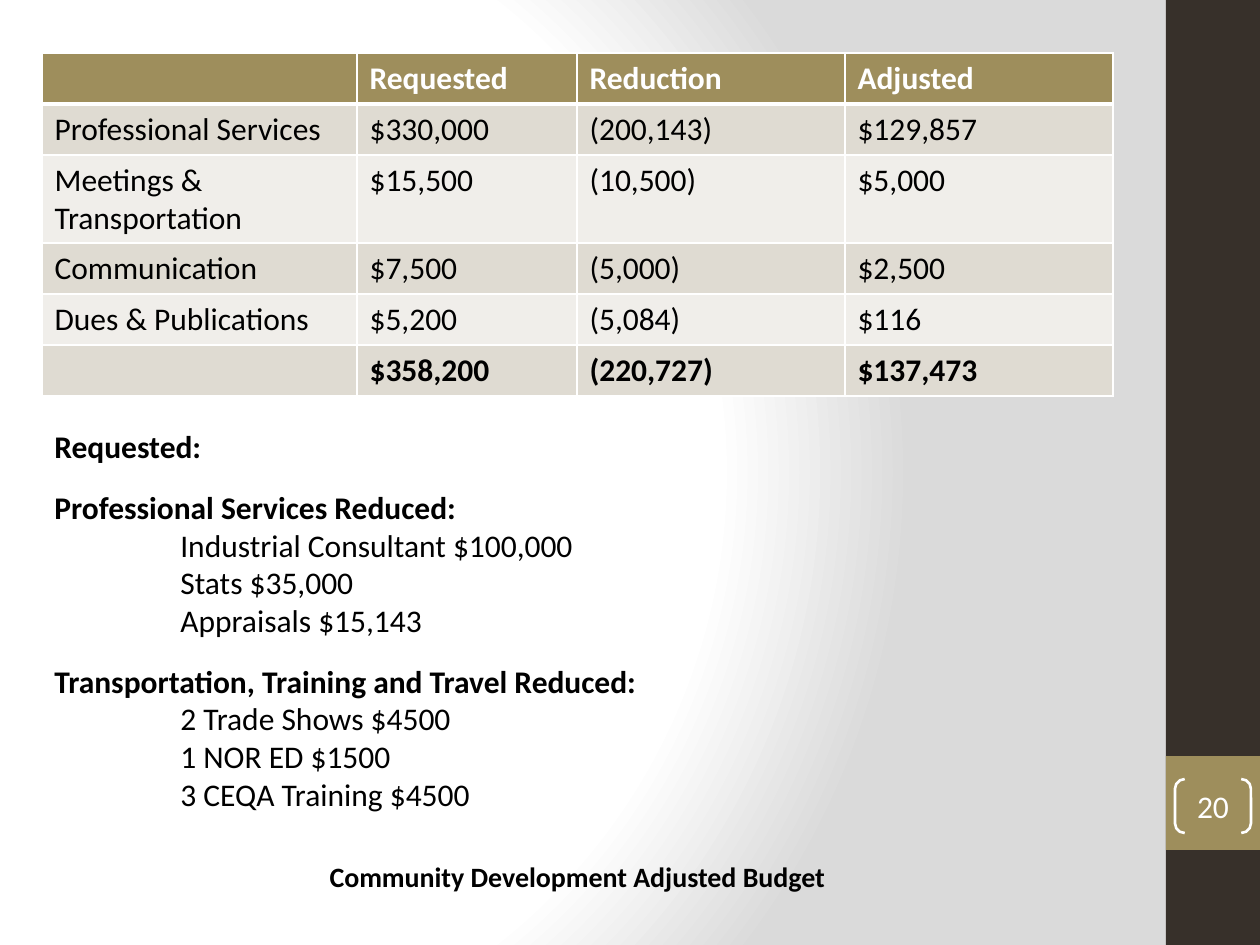
from lxml import etree
from pptx import Presentation
from pptx.dml.color import RGBColor
from pptx.enum.shapes import MSO_SHAPE
from pptx.enum.text import MSO_ANCHOR, PP_ALIGN
from pptx.oxml import parse_xml
from pptx.oxml.ns import nsdecls, qn
from pptx.util import Pt

RECTANGLE, BRACKETS = MSO_SHAPE.RECTANGLE, MSO_SHAPE.DOUBLE_BRACKET
CENTER, LEFT = PP_ALIGN.CENTER, PP_ALIGN.LEFT
MIDDLE = MSO_ANCHOR.MIDDLE
EMU_PER_PX = 914400 / 126
FONT = "Calibri"
COLORS = {
    "white": "FFFFFF",
    "black": "000000",
    "shade": "DADADA",
    "sidebar": "37302A",
    "accent": "9E8E5C",
    "band_dark": "DFDBD2",
    "band_light": "F0EEEA",
}
COLUMN_WIDTHS = [315, 220, 268, 268]
ROW_HEIGHT = 51
BUDGET = [
    ["", "Requested", "Reduction", "Adjusted"],
    ["Professional Services", "$330,000", "(200,143)", "$129,857"],
    ["Meetings & Transportation", "$15,500", "(10,500)", "$5,000"],
    ["Communication", "$7,500", "(5,000)", "$2,500"],
    ["Dues & Publications", "$5,200", "(5,084)", "$116"],
    ["", "$358,200", "(220,727)", "$137,473"],
]
REDUCTIONS = [
    ("Requested:", []),
    ("Professional Services Reduced:",
     ["Industrial Consultant $100,000", "Stats $35,000", "Appraisals $15,143"]),
    ("Transportation, Training and Travel Reduced:",
     ["2 Trade Shows $4500", "1 NOR ED $1500", "3 CEQA Training $4500"]),
]


def px(length):
    return round(length * EMU_PER_PX)


def color(name):
    return RGBColor.from_string(COLORS[name])


def apply(target, values):
    for key, value in values.items():
        setattr(target, key, value)


def write(paragraph, text, ink="black", size=18, bold=False, **layout):
    apply(paragraph, layout)
    run = paragraph.add_run()
    run.text = text
    apply(run.font, {"name": FONT, "size": Pt(size), "bold": bold})
    run.font.color.rgb = color(ink)


def paint_background(slide):
    slide.background.fill.gradient()
    gradient = slide.element.xpath(".//a:gradFill")[0]
    stops = "".join(
        f'<a:gs pos="{position * 1000}"><a:srgbClr val="{COLORS[name]}"/></a:gs>'
        for position, name in [(0, "white"), (75, "white"), (100, "shade")])
    circle = parse_xml(
        f'<a:gradFill {nsdecls("a")} rotWithShape="1"><a:gsLst>{stops}</a:gsLst>'
        '<a:path path="circle"><a:fillToRect l="20000" t="50000" r="100000" b="50000"/>'
        '</a:path></a:gradFill>')
    gradient.getparent().replace(gradient, circle)


def add_block(slide, fill, *box):
    block = slide.shapes.add_shape(RECTANGLE, *map(px, box))
    block.shadow.inherit = False
    block.fill.solid()
    block.fill.fore_color.rgb = color(fill)
    block.line.fill.background()


def add_page_number(slide, number, *box):
    brackets = slide.shapes.add_shape(BRACKETS, *map(px, box))
    brackets.shadow.inherit = False
    brackets.adjustments[0] = 0.18
    brackets.fill.background()
    brackets.line.color.rgb = color("white")
    brackets.line.width = Pt(1.5)
    frame = brackets.text_frame
    apply(frame, {"margin_left": 0, "margin_right": 0, "margin_top": 0,
                  "margin_bottom": 0, "vertical_anchor": MIDDLE})
    write(frame.paragraphs[0], number, "white", alignment=CENTER)


def add_text_frame(slide, *box):
    frame = slide.shapes.add_textbox(*map(px, box)).text_frame
    frame.word_wrap = True
    return frame


def add_borders(cell, bottom):
    properties = cell._tc.get_or_add_tcPr()
    widths = {"a:lnL": 1, "a:lnR": 1, "a:lnT": 1, "a:lnB": bottom}
    for index, (side, width) in enumerate(widths.items()):
        border = etree.Element(qn(side), w=str(Pt(width)))
        fill = etree.SubElement(border, qn("a:solidFill"))
        etree.SubElement(fill, qn("a:srgbClr"), val=COLORS["white"])
        properties.insert(index, border)


def add_budget_table(slide, left, top):
    table = slide.shapes.add_table(
        len(BUDGET), len(COLUMN_WIDTHS), px(left), px(top),
        px(sum(COLUMN_WIDTHS)), px(ROW_HEIGHT * len(BUDGET))).table
    for column, width in zip(table.columns, COLUMN_WIDTHS):
        column.width = px(width)
    for index, (row, entries) in enumerate(zip(table.rows, BUDGET)):
        row.height = px(ROW_HEIGHT)
        header = index == 0
        band = "accent" if header else "band_dark" if index % 2 else "band_light"
        for cell, entry in zip(row.cells, entries):
            cell.fill.solid()
            cell.fill.fore_color.rgb = color(band)
            add_borders(cell, 3 if header else 1)
            write(cell.text_frame.paragraphs[0], entry,
                  "white" if header else "black",
                  bold=header or index == len(BUDGET) - 1)


def add_reductions(slide, *box):
    frame = add_text_frame(slide, *box)
    for index, (heading, items) in enumerate(REDUCTIONS):
        paragraph = frame.add_paragraph() if index else frame.paragraphs[0]
        write(paragraph, heading, bold=True, alignment=LEFT,
              space_before=Pt(13 if index else 0))
        for item in items:
            detail = frame.add_paragraph()
            write(detail, item, alignment=LEFT)
            detail._p.get_or_add_pPr().set("marL", str(px(126)))


def main():
    presentation = Presentation()
    apply(presentation, {"slide_width": px(1260), "slide_height": px(945)})
    slide = presentation.slides.add_slide(presentation.slide_layouts[6])
    paint_background(slide)
    add_block(slide, "sidebar", 1166, 0, 94, 945)
    add_block(slide, "accent", 1166, 756, 94, 94)
    caption = add_text_frame(slide, 42, 853, 1071, 71)
    write(caption.paragraphs[0], "Community Development Adjusted Budget",
          size=16, bold=True, alignment=CENTER)
    add_page_number(slide, "20", 1175, 779, 76, 54)
    add_budget_table(slide, 42, 53)
    add_reductions(slide, 42, 421, 1061, 403)
    presentation.save("out.pptx")


if __name__ == "__main__":
    main()
